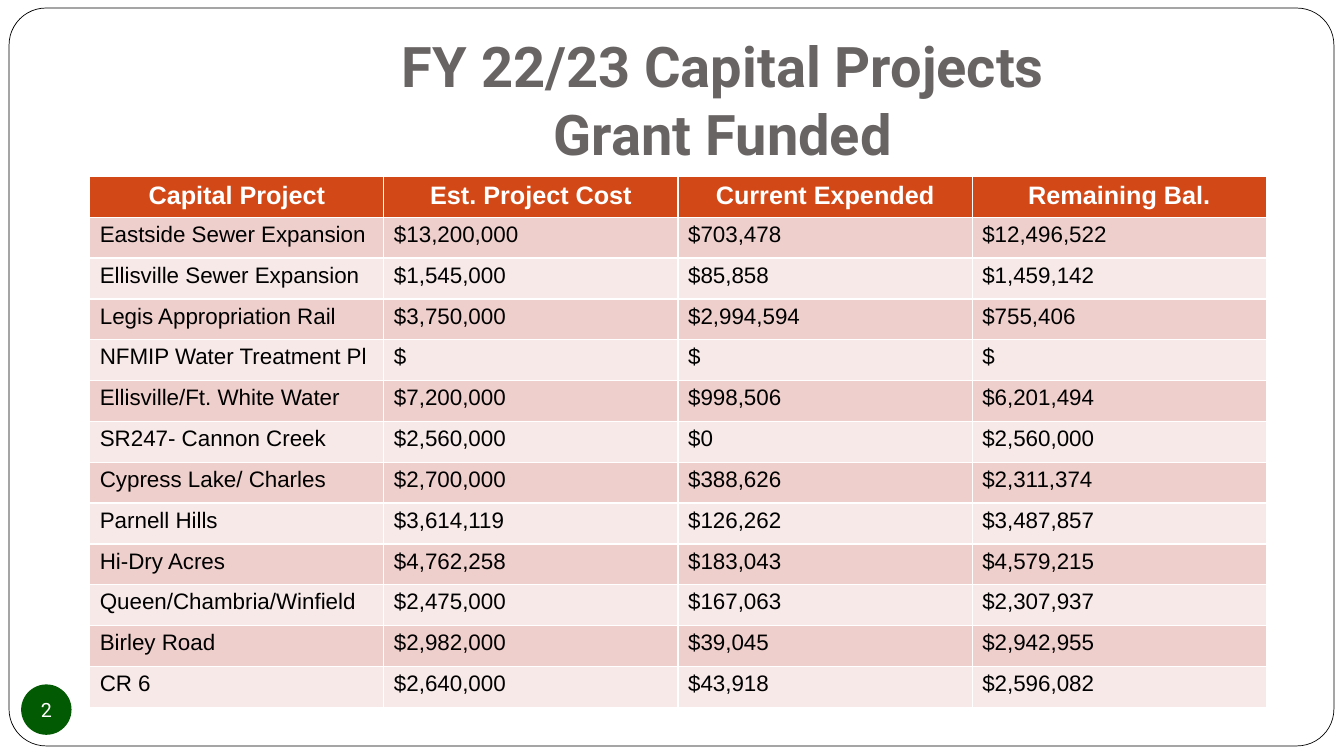
from pptx import Presentation, util as u
from pptx.dml.color import RGBColor
from pptx.enum import shapes, text

TITLE = ["FY 22/23 Capital Projects", "Grant Funded"]
PAGE = "2"
HEADER = ("Capital Project", "Est. Project Cost", "Current Expended", "Remaining Bal.")
PROJECTS = [
    ("Eastside Sewer Expansion", "$13,200,000", "$703,478", "$12,496,522"),
    ("Ellisville Sewer Expansion", "$1,545,000", "$85,858", "$1,459,142"),
    ("Legis Appropriation Rail", "$3,750,000", "$2,994,594", "$755,406"),
    ("NFMIP Water Treatment Pl", "$", "$", "$"),
    ("Ellisville/Ft. White Water", "$7,200,000", "$998,506", "$6,201,494"),
    ("SR247- Cannon Creek", "$2,560,000", "$0", "$2,560,000"),
    ("Cypress Lake/ Charles", "$2,700,000", "$388,626", "$2,311,374"),
    ("Parnell Hills", "$3,614,119", "$126,262", "$3,487,857"),
    ("Hi-Dry Acres", "$4,762,258", "$183,043", "$4,579,215"),
    ("Queen/Chambria/Winfield", "$2,475,000", "$167,063", "$2,307,937"),
    ("Birley Road", "$2,982,000", "$39,045", "$2,942,955"),
    ("CR 6", "$2,640,000", "$43,918", "$2,596,082"),
]

WHITE = RGBColor(0xFF, 0xFF, 0xFF)
BLACK = RGBColor(0, 0, 0)
GREY = RGBColor(0x69, 0x64, 0x64)
ORANGE = RGBColor(0xD3, 0x48, 0x17)
BANDS = (RGBColor(0xEF, 0xCF, 0xCC), RGBColor(0xF7, 0xE9, 0xE8))
GREEN = RGBColor(0x02, 0x5A, 0x02)
CENTER = text.PP_ALIGN.CENTER


def box(left, top, width, height):
    return [u.Inches(v) for v in (left, top, width, height)]


def add_run(p, content, size, font, color, bold=False):
    r = p.add_run()
    r.text = content
    r.font.size = u.Pt(size)
    r.font.name = font
    r.font.color.rgb = color
    r.font.bold = bold


def add_shape(s, kind, place, fill):
    sp = s.shapes.add_shape(kind, *box(*place))
    sp.shadow.inherit = False
    sp.fill.solid()
    sp.fill.fore_color.rgb = fill
    return sp


def add_title(s):
    title = s.shapes.title
    title.left, title.top, title.width, title.height = box(2.67, 0.3, 9, 1.45)
    tf = title.text_frame
    tf.word_wrap = True
    tf.auto_size = text.MSO_AUTO_SIZE.NONE
    tf.vertical_anchor = text.MSO_ANCHOR.BOTTOM
    tf.margin_left = tf.margin_right = tf.margin_bottom = u.Inches(0.1)
    tf.margin_top = u.Inches(0.05)
    p = tf.paragraphs[0]
    p.alignment = CENTER
    p.line_spacing = 1.0
    for i, line in enumerate(TITLE):
        if i:
            p.add_line_break()
        add_run(p, line, 40, "Roboto", GREY, True)


def add_projects(s):
    rows = [HEADER, *PROJECTS]
    place = box(0.89, 1.75, 11.67, 5.27)
    table = s.shapes.add_table(len(rows), len(HEADER), *place).table
    for i, row in enumerate(rows):
        head = i == 0
        for j, content in enumerate(row):
            cell = table.cell(i, j)
            cell.fill.solid()
            cell.fill.fore_color.rgb = ORANGE if head else BANDS[(i - 1) % 2]
            p = cell.text_frame.paragraphs[0]
            if head:
                p.alignment = CENTER
                add_run(p, content, 18, "Arial", WHITE, True)
            else:
                add_run(p, content, 16, "Arial", BLACK)


def add_page_badge(s):
    badge = add_shape(s, shapes.MSO_SHAPE.OVAL, (0.21, 6.79, 0.5, 0.5), GREEN)
    badge.line.fill.background()
    tf = badge.text_frame
    tf.word_wrap = False
    tf.vertical_anchor = text.MSO_ANCHOR.MIDDLE
    tf.margin_left = tf.margin_right = tf.margin_top = tf.margin_bottom = 0
    p = tf.paragraphs[0]
    p.alignment = CENTER
    add_run(p, PAGE, 14, "Roboto", WHITE)


def main():
    prs = Presentation()
    prs.slide_width, prs.slide_height = u.Inches(13.33), u.Inches(7.5)
    s = prs.slides.add_slide(prs.slide_layouts[5])
    frame = add_shape(s, shapes.MSO_SHAPE.ROUNDED_RECTANGLE, (0.09, 0.08, 13.14, 7.32), WHITE)
    frame.adjustments[0] = 0.05
    frame.line.color.rgb = BLACK
    frame.line.width = u.Pt(0.5)
    s.shapes.title.element.addprevious(frame.element)
    add_title(s)
    add_projects(s)
    add_page_badge(s)
    prs.save("out.pptx")


if __name__ == "__main__":
    main()
